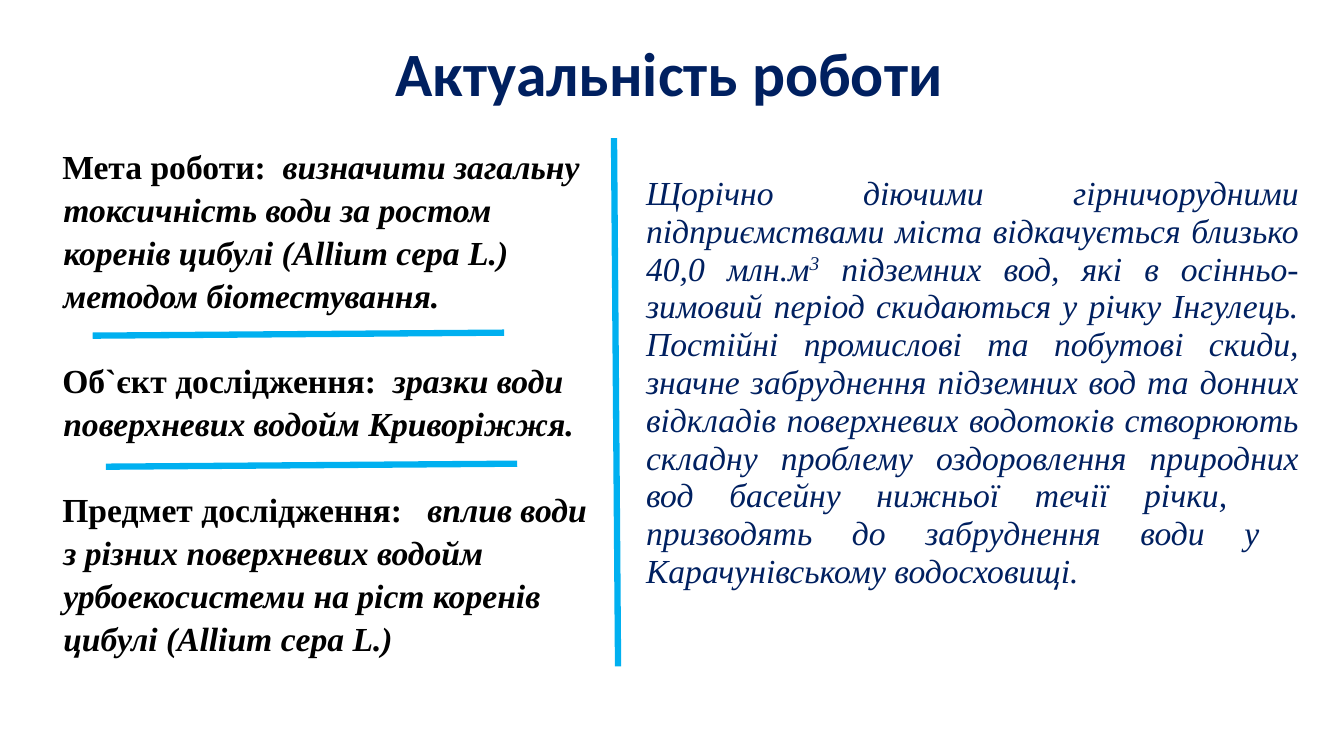
from lxml import etree
from pptx import Presentation
from pptx.dml.color import RGBColor
from pptx.enum.shapes import MSO_CONNECTOR as Connector
from pptx.enum.text import MSO_ANCHOR as Anchor, MSO_AUTO_SIZE as AutoSize, PP_ALIGN as Align
from pptx.oxml.ns import qn
from pptx.util import Inches, Pt

NAVY, BLACK, SKY = "002060", "000000", "00B0F0"
BODY_FONT = "Times New Roman"


def color(value):
    return RGBColor.from_string(value)


class SlideBuilder:
    def __init__(self, page):
        self.page = page

    def text(self, left, top, width, height, runs, size=24, font=BODY_FONT, ink=BLACK,
             align=Align.LEFT, spacing=1.0, grow=True):
        """Add one paragraph; runs are (text, bold, italic) tuples."""
        box = self.page.shapes.add_textbox(Inches(left), Inches(top), Inches(width), Inches(height))
        frame = box.text_frame
        frame.word_wrap = True
        frame.auto_size = AutoSize.SHAPE_TO_FIT_TEXT if grow else AutoSize.NONE
        frame.vertical_anchor = Anchor.TOP if grow else Anchor.MIDDLE
        para = frame.paragraphs[0]
        para.alignment = align
        para.line_spacing = spacing
        for words, bold, italic in runs:
            span = para.add_run()
            span.text = words
            span.font.name = font
            span.font.size = Pt(size)
            span.font.bold = bold
            span.font.italic = italic
            span.font.color.rgb = color(ink)
        return para

    def definition(self, top, height, label, meaning):
        para = self.text(0.33, top, 5.76, height,
                         [(label, True, False), (meaning, True, True)], spacing=1.07)
        para.space_after = Pt(22.7)
        properties = para._p.get_or_add_pPr()
        properties.set("marL", str(Inches(0.2)))
        properties.set("indent", str(Inches(-0.01)))

    def line(self, start, end):
        rule = self.page.shapes.add_connector(Connector.STRAIGHT, *map(Inches, start + end))
        rule.line.color.rgb = color(SKY)
        rule.line.width = Pt(4.5)
        etree.SubElement(rule._element.spPr, qn("a:effectLst"))


def main():
    deck = Presentation()
    deck.slide_width, deck.slide_height = Inches(13.33), Inches(7.5)
    builder = SlideBuilder(deck.slides.add_slide(deck.slide_layouts[6]))

    # Title
    builder.text(0.89, 0.03, 11.5, 1.45, [("Актуальність роботи", True, False)], size=44,
                 font="Calibri", ink=NAVY, align=Align.CENTER, spacing=0.9, grow=False)

    # Background of the problem, with a cubic metre sign
    problem = [
        "Щорічно діючими гірничорудними підприємствами міста відкачується близько 40,0 млн.м",
        "3",
        " підземних вод, які в осінньо-зимовий період скидаються у річку Інгулець. "
        "Постійні промислові та побутові скиди, значне забруднення підземних вод та донних "
        "відкладів поверхневих водотоків створюють складну проблему оздоровлення природних "
        "вод басейну нижньої течії річки,   призводять до забруднення води у  "
        "Карачунівському водосховищі.",
    ]
    para = builder.text(6.31, 1.68, 6.67, 4.27, [(words, False, True) for words in problem],
                        ink=NAVY, align=Align.JUSTIFY, spacing=Pt(27))
    para.runs[1]._r.get_or_add_rPr().set("baseline", "30000")

    # Aim, object and subject of the study
    for top, height, label, meaning in [
        (1.37, 1.81, "Мета роботи:  ", "визначити загальну токсичність води за ростом "
         "коренів цибулі (Allium cepa L.) методом біотестування."),
        (3.49, 0.97, "Об`єкт дослідження:  ", "зразки води поверхневих водойм Криворіжжя."),
        (4.77, 1.83, "Предмет дослідження:   ", "вплив води з різних поверхневих водойм "
         "урбоекосистеми на ріст коренів цибулі (Allium cepa L.)"),
    ]:
        builder.definition(top, height, label, meaning)

    # Dividers
    builder.line((0.92, 3.33), (5, 3.3))
    builder.line((1.05, 4.63), (5.13, 4.6))
    builder.line((6.13, 6.61), (6.09, 1.37))

    deck.save("out.pptx")


if __name__ == "__main__":
    main()
